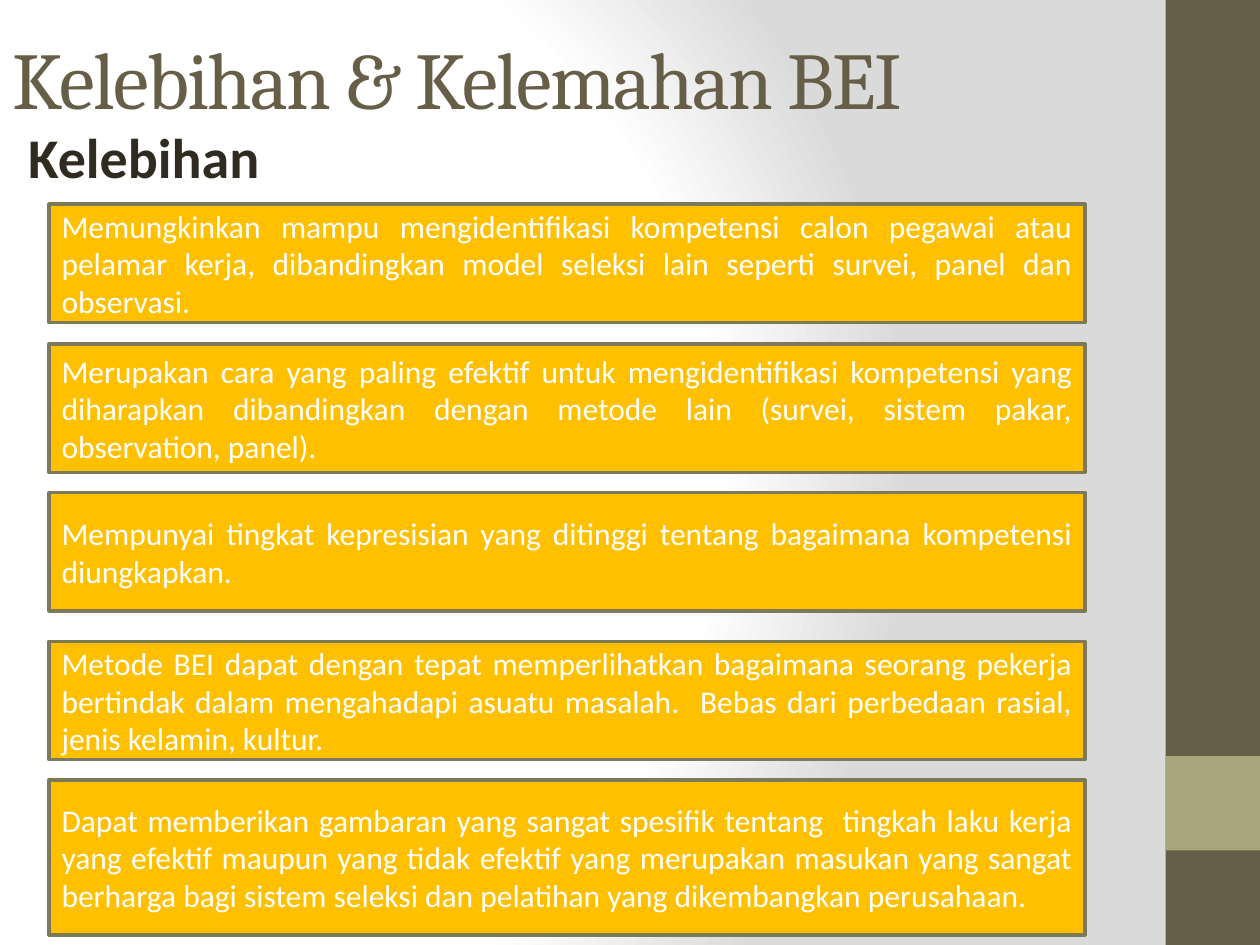
from dataclasses import dataclass

from pptx import Presentation
from pptx.dml.color import RGBColor
from pptx.enum.shapes import MSO_SHAPE as Shape
from pptx.enum.text import MSO_ANCHOR as Anchor, PP_ALIGN as Align
from pptx.oxml import parse_xml
from pptx.oxml.ns import nsdecls, qn
from pptx.util import Pt


@dataclass(frozen=True)
class Theme:
    band: str = "675E47"
    accent: str = "A9A57C"
    ink: str = "2F2B20"
    card: str = "FFC000"
    card_line: str = "7D7A5C"
    white: str = "FFFFFF"
    shade: str = "DADADA"
    heading_font: str = "Cambria"
    body_font: str = "Calibri"
    title_size: float = 46
    subtitle_size: float = 32
    card_size: float = 18


THEME = Theme()
SLIDE_W, SLIDE_H = 720, 540
MAIN_W = 666

# Top and height of each card, with its text
STRENGTHS = [
    (116.64, 67.68, "Memungkinkan mampu mengidentifikasi kompetensi calon pegawai atau pelamar kerja, "
     "dibandingkan model seleksi lain seperti survei, panel dan observasi."),
    (196.56, 73.44, "Merupakan cara yang paling efektif untuk mengidentifikasi kompetensi yang diharapkan "
     "dibandingkan dengan metode lain (survei, sistem pakar, observation, panel)."),
    (281.52, 67.68, "Mempunyai tingkat kepresisian yang ditinggi tentang bagaimana kompetensi diungkapkan."),
    (366.48, 67.68, "Metode BEI dapat dengan tepat memperlihatkan bagaimana seorang pekerja bertindak dalam "
     "mengahadapi asuatu masalah.  Bebas dari perbedaan rasial, jenis kelamin, kultur."),
    (445.68, 88.56, "Dapat memberikan gambaran yang sangat spesifik tentang  tingkah laku kerja yang efektif "
     "maupun yang tidak efektif yang merupakan masukan yang sangat berharga bagi sistem seleksi dan "
     "pelatihan yang dikembangkan perusahaan."),
]


def write(shape, text, *, font, size, color, bold=False, align=Align.LEFT,
          anchor=Anchor.MIDDLE, tracking=0):
    frame = shape.text_frame
    frame.word_wrap = True
    frame.vertical_anchor = anchor
    paragraph = frame.paragraphs[0]
    paragraph.alignment = align
    run = paragraph.add_run()
    run.text = text
    run.font.name = font
    run.font.size = Pt(size)
    run.font.bold = bold
    run.font.color.rgb = RGBColor.from_string(color)
    if tracking:
        run.font._element.set("spc", str(int(tracking * 100)))
    return paragraph


def add_rect(slide, box, fill, line=None):
    rect = slide.shapes.add_shape(Shape.RECTANGLE, *map(Pt, box))
    rect.shadow.inherit = False
    rect.fill.solid()
    rect.fill.fore_color.rgb = RGBColor.from_string(fill)
    if line:
        rect.line.color.rgb = RGBColor.from_string(line)
        rect.line.width = Pt(2)
    else:
        rect.line.fill.background()
    return rect


def paint_background(slide):
    slide.background.fill.solid()
    properties = slide.element.find(".//" + qn("p:bgPr"))
    stops = "".join(
        f'<a:gs pos="{percent * 1000}"><a:srgbClr val="{color}"/></a:gs>'
        for percent, color in [(0, THEME.white), (75, THEME.white), (100, THEME.shade)])
    gradient = parse_xml(
        f'<a:gradFill {nsdecls("a")} rotWithShape="1"><a:gsLst>{stops}</a:gsLst>'
        '<a:path path="circle"><a:fillToRect l="20000" t="50000" r="100000" b="50000"/>'
        '</a:path></a:gradFill>')
    properties.replace(properties[0], gradient)


def add_side_band(slide, box):
    left, top, width, height = box
    add_rect(slide, box, THEME.band)
    add_rect(slide, (left, top + 0.8 * height, width, width), THEME.accent)


def place_title(slide, box):
    title = slide.shapes.title
    title.left, title.top, title.width, title.height = map(Pt, box)
    write(title, "Kelebihan & Kelemahan BEI", font=THEME.heading_font,
          size=THEME.title_size, color=THEME.band, tracking=-1)


def add_subtitle(slide, box):
    subtitle = slide.shapes.add_textbox(*map(Pt, box))
    paragraph = write(subtitle, "Kelebihan", font=THEME.body_font, size=THEME.subtitle_size,
                      color=THEME.ink, bold=True, anchor=Anchor.TOP)
    paragraph._p.get_or_add_pPr().set("marL", str(Pt(9)))


def add_cards(slide, left, width):
    for top, height, text in STRENGTHS:
        card = add_rect(slide, (left, top, width, height), THEME.card, THEME.card_line)
        write(card, text, font=THEME.body_font, size=THEME.card_size,
              color=THEME.white, align=Align.JUSTIFY)


def main():
    deck = Presentation()
    deck.slide_width, deck.slide_height = Pt(SLIDE_W), Pt(SLIDE_H)
    slide = deck.slides.add_slide(deck.slide_layouts[5])
    paint_background(slide)
    add_side_band(slide, (MAIN_W, 0, SLIDE_W - MAIN_W, SLIDE_H))
    place_title(slide, (0, 0, MAIN_W, 88.56))
    add_subtitle(slide, (0, 66.24, MAIN_W, SLIDE_H - 66.24))
    add_cards(slide, 28.08, 591.84)
    deck.save("out.pptx")


if __name__ == "__main__":
    main()
